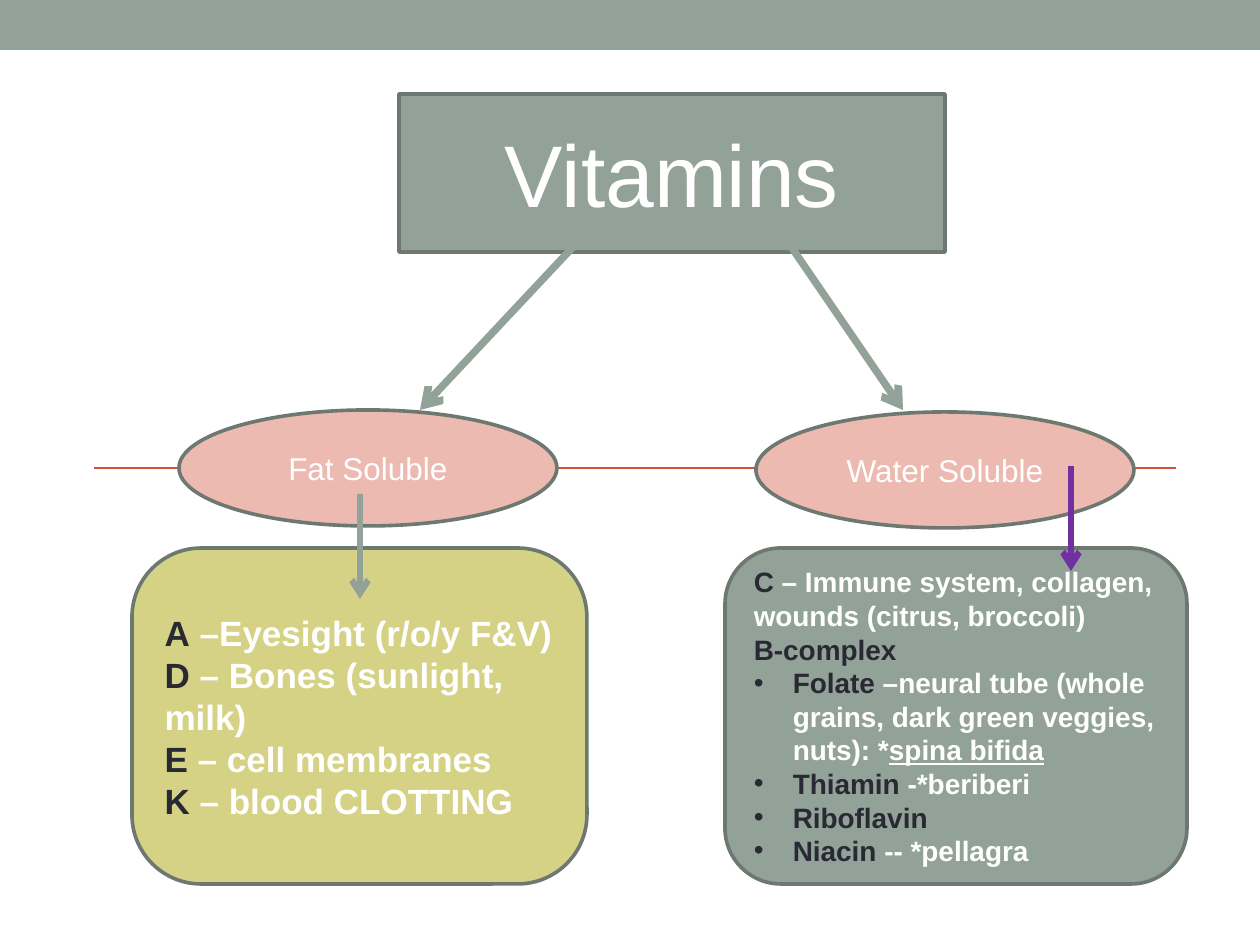
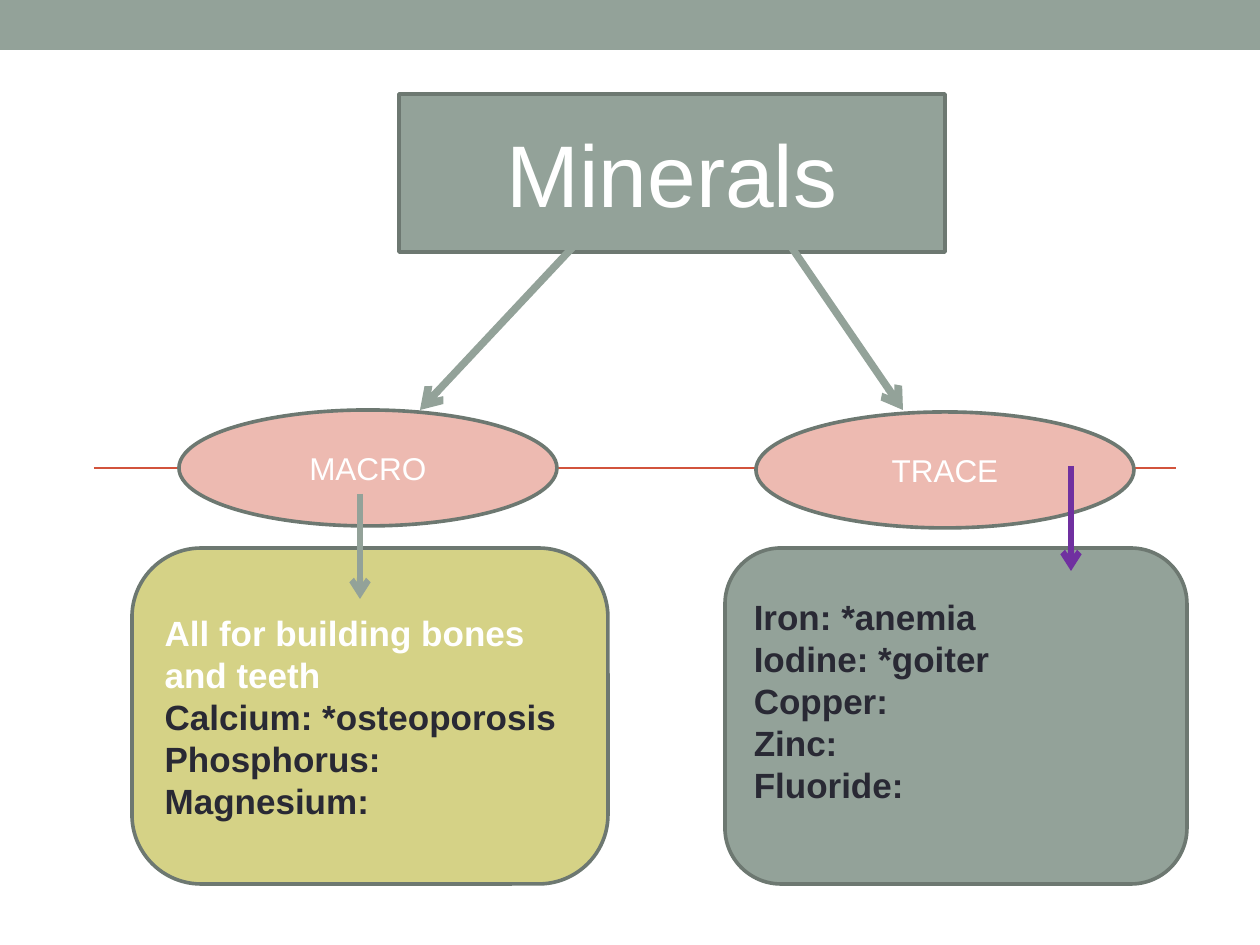
from typing import NamedTuple, Optional

from lxml.etree import SubElement
from pptx import Presentation
from pptx.dml.color import RGBColor
from pptx.enum.shapes import MSO_CONNECTOR as Connector, MSO_SHAPE as Preset
from pptx.enum.text import MSO_ANCHOR as Anchor, PP_ALIGN as Align
from pptx.oxml.ns import qn
from pptx.util import Emu, Pt

PX_PER_INCH = 126
FONT = "Arial"
SAGE = RGBColor(0x93, 0xA2, 0x99)
SLATE = RGBColor(0x6D, 0x78, 0x71)
RUST = RGBColor(0xD2, 0x53, 0x3C)
PINK = RGBColor(0xED, 0xBA, 0xB1)
OLIVE = RGBColor(0xD5, 0xD2, 0x86)
PURPLE = RGBColor(0x70, 0x30, 0xA0)
INK = RGBColor(0x29, 0x29, 0x34)
WHITE = RGBColor(0xFF, 0xFF, 0xFF)

OUTLINE_PT = 2.08
BULLET_INDENT = 39
CARD_TOP, CARD_HEIGHT = 548, 336


class Frame(NamedTuple):
    left: int
    top: int
    width: int
    height: int


class Stroke(NamedTuple):
    start: tuple[int, int]
    end: tuple[int, int]
    color: RGBColor
    points: float
    arrow: bool = True


class Span(NamedTuple):
    text: str
    color: RGBColor = INK
    underline: bool = False


class Line(NamedTuple):
    spans: list[Span]
    bullet: bool = False


class Card(NamedTuple):
    left: int
    width: int
    fill: RGBColor
    size: int
    lines: list[Line]
    corner: Optional[float] = None
    bottom_inset: int = 6


class Topic(NamedTuple):
    title: str
    branches: tuple[str, str]
    cards: tuple[Card, Card]


TITLE_FRAME = Frame(399, 94, 546, 158)
BRANCH_FRAMES = (Frame(179, 410, 378, 116), Frame(756, 412, 378, 116))
RULE = Stroke((94, 468), (1176, 468), RUST, 1.5, arrow=False)
TITLE_ARROWS = (
    Stroke((588, 231), (420, 410), SAGE, 4.25),
    Stroke((766, 210), (903, 410), SAGE, 4.25),
)
CARD_ARROWS = (
    Stroke((360, 494), (360, 599), SAGE, 3.5),
    Stroke((1071, 466), (1071, 571), PURPLE, 3.5),
)


def entry(name: str, detail: str = "", bullet: bool = False) -> Line:
    spans = [Span(name)]
    if detail:
        spans.append(Span(detail, WHITE))
    return Line(spans, bullet)


def left_card(width: int, lines: list[Line]) -> Card:
    return Card(132, width, OLIVE, 20, lines, corner=0.206)


def right_card(size: int, lines: list[Line], bottom_inset: int = 6) -> Card:
    return Card(725, 462, SAGE, size, lines, bottom_inset=bottom_inset)


TOPICS = (
    Topic("Vitamins", ("Fat Soluble", "Water Soluble"), (
        left_card(455, [
            entry("A", " –Eyesight (r/o/y F&V)"),
            entry("D", " – Bones (sunlight, milk)"),
            entry("E", " – cell membranes"),
            entry("K ", "– blood CLOTTING"),
        ]),
        right_card(16, [
            entry("C", " – Immune system, collagen, wounds (citrus, broccoli)"),
            entry("B-complex"),
            Line([
                Span("Folate"),
                Span(" –neural tube (whole grains, dark green veggies, nuts): *", WHITE),
                Span("spina bifida", WHITE, underline=True),
            ], bullet=True),
            entry("Thiamin ", "-*beriberi", bullet=True),
            entry("Riboflavin", bullet=True),
            entry("Niacin ", "-- *pellagra", bullet=True),
        ]),
    )),
    Topic("Minerals", ("MACRO", "TRACE"), (
        left_card(476, [
            Line([Span("All for building bones and teeth", WHITE)]),
            entry("Calcium: *osteoporosis"),
            entry("Phosphorus:"),
            entry("Magnesium:"),
        ]),
        right_card(20, [
            entry("Iron: *anemia"),
            entry("Iodine: *goiter"),
            entry("Copper:"),
            entry("Zinc:"),
            entry("Fluoride:"),
        ], bottom_inset=38),
    )),
)


def px(length: int) -> Emu:
    return Emu(round(length * 914400 / PX_PER_INCH))


def add_panel(page, preset, frame: Frame, fill: RGBColor, outlined: bool = True):
    panel = page.shapes.add_shape(preset, *map(px, frame))
    panel.shadow.inherit = False
    panel.fill.solid()
    panel.fill.fore_color.rgb = fill
    if outlined:
        panel.line.color.rgb = SLATE
        panel.line.width = Pt(OUTLINE_PT)
    else:
        panel.line.fill.background()
    return panel


def add_stroke(page, stroke: Stroke) -> None:
    connector = page.shapes.add_connector(
        Connector.STRAIGHT, *map(px, stroke.start + stroke.end))
    connector.line.color.rgb = stroke.color
    connector.line.width = Pt(stroke.points)
    properties = connector.element.spPr
    if stroke.arrow:
        SubElement(properties.find(qn("a:ln")), qn("a:tailEnd"), type="arrow")
    SubElement(properties, qn("a:effectLst"))


def add_bullet(para) -> None:
    properties = para._p.get_or_add_pPr()
    properties.set("marL", str(px(BULLET_INDENT)))
    properties.set("indent", str(-px(BULLET_INDENT)))
    SubElement(properties, qn("a:buFont"), typeface=FONT)
    SubElement(properties, qn("a:buChar"), char="•")


def write(panel, lines: list[Line], size: int, align, bold: bool = False) -> None:
    text = panel.text_frame
    text.word_wrap = True
    text.vertical_anchor = Anchor.MIDDLE
    for index, line in enumerate(lines):
        para = text.add_paragraph() if index else text.paragraphs[0]
        para.alignment = align
        if line.bullet:
            add_bullet(para)
        for span in line.spans:
            run = para.add_run()
            run.text = span.text
            run.font.name = FONT
            run.font.size = Pt(size)
            run.font.bold = bold
            run.font.underline = span.underline
            run.font.color.rgb = span.color


def add_label(page, preset, frame: Frame, fill: RGBColor, label: str, size: int) -> None:
    panel = add_panel(page, preset, frame, fill)
    write(panel, [Line([Span(label, WHITE)])], size, Align.CENTER)


def add_card(page, card: Card) -> None:
    frame = Frame(card.left, CARD_TOP, card.width, CARD_HEIGHT)
    panel = add_panel(page, Preset.ROUNDED_RECTANGLE, frame, card.fill)
    if card.corner is not None:
        panel.adjustments[0] = card.corner
    panel.text_frame.margin_bottom = px(card.bottom_inset)
    write(panel, card.lines, card.size, Align.LEFT, bold=True)


def add_topic(deck, topic: Topic) -> None:
    page = deck.slides.add_slide(deck.slide_layouts[6])
    add_panel(page, Preset.RECTANGLE, Frame(0, 0, 1260, 50), SAGE, outlined=False)
    add_stroke(page, RULE)
    add_label(page, Preset.RECTANGLE, TITLE_FRAME, SAGE, topic.title, 50)
    for stroke in TITLE_ARROWS:
        add_stroke(page, stroke)
    for frame, branch in zip(BRANCH_FRAMES, topic.branches):
        add_label(page, Preset.OVAL, frame, PINK, branch, 18)
    for card in topic.cards:
        add_card(page, card)
    for stroke in CARD_ARROWS:
        add_stroke(page, stroke)


def main() -> None:
    deck = Presentation()
    deck.slide_width, deck.slide_height = px(1260), px(945)
    for topic in TOPICS:
        add_topic(deck, topic)
    deck.save("out.pptx")


if __name__ == "__main__":
    main()
